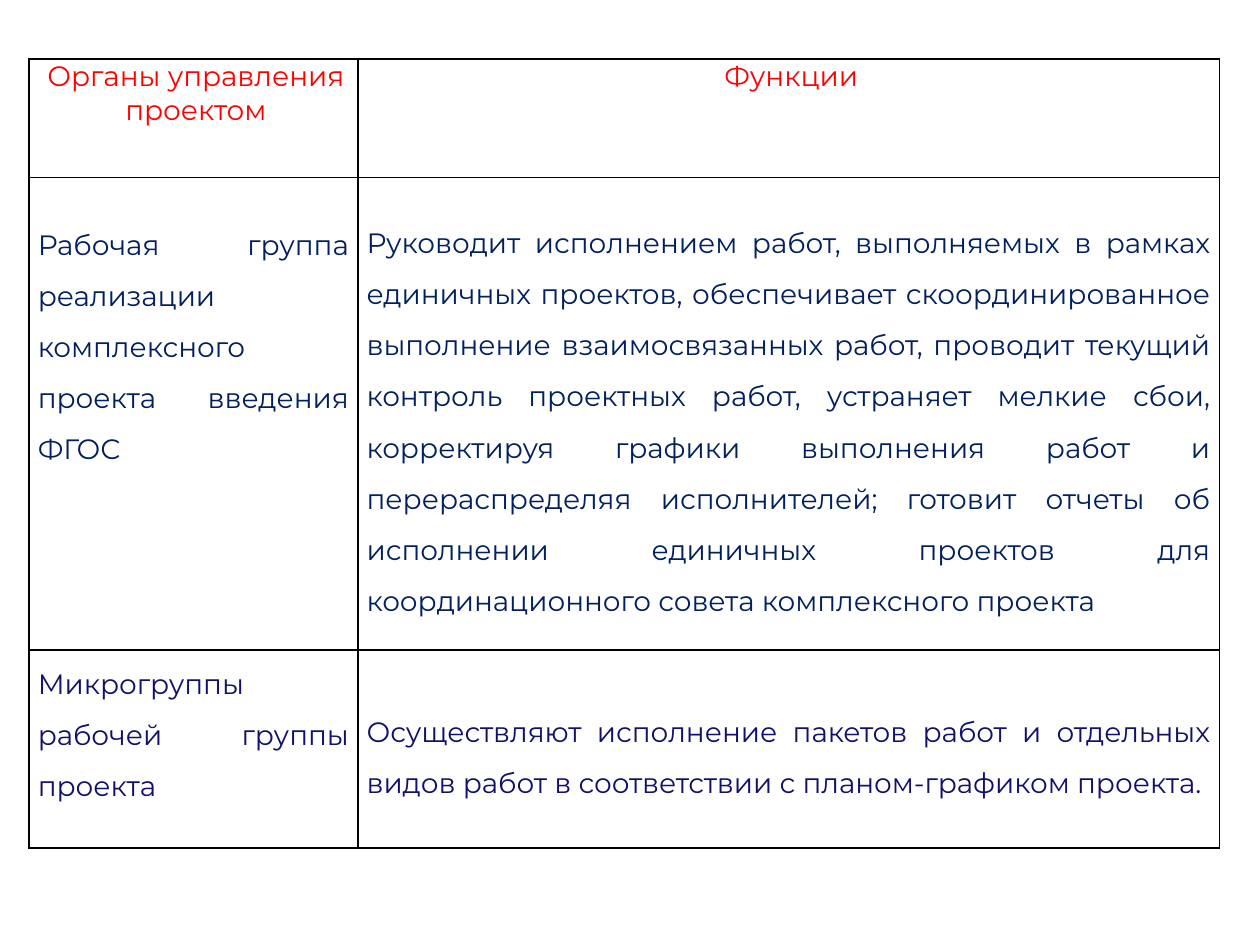
from lxml import etree
from pptx import Presentation
from pptx.dml.color import RGBColor
from pptx.enum.text import MSO_ANCHOR, PP_ALIGN
from pptx.oxml.ns import qn
from pptx.util import Inches, Pt

CENTER, JUSTIFY = PP_ALIGN.CENTER, PP_ALIGN.JUSTIFY
TOP, MIDDLE = MSO_ANCHOR.TOP, MSO_ANCHOR.MIDDLE

THEME = {
    "font": "Montserrat",
    "size": Pt(16),
    "header": "FF0000",
    "group": "002060",
    "microgroup": "11116D",
    "border": "000000",
    "border_width": Pt(1),
}

# Grid of the table, in inches
LEFT, UPPER = 0.23, 0.47
COLUMNS = (2.61, 6.84)
ROWS = (0.94, 3.75, 1.57)

# Each row: colour, alignment, line spacing, anchor of the second column,
# gap above the first column, texts
CONTENT = (
    ("header", CENTER, 1.0, TOP, 0, ("Органы управления проектом", "Функции")),
    ("group", JUSTIFY, 1.5, MIDDLE, 0.27, (
        "Рабочая группа реализации комплексного проекта введения ФГОС",
        "Руководит исполнением работ, выполняемых в рамках единичных проектов, "
        "обеспечивает скоординированное выполнение взаимосвязанных работ, "
        "проводит текущий контроль проектных работ, устраняет мелкие сбои, "
        "корректируя графики выполнения работ и перераспределяя исполнителей; "
        "готовит отчеты об исполнении единичных проектов для "
        "координационного совета комплексного проекта")),
    ("microgroup", JUSTIFY, 1.5, MIDDLE, 0, (
        "Микрогруппы рабочей группы проекта",
        "Осуществляют исполнение пакетов работ и отдельных видов работ "
        "в соответствии с планом-графиком проекта.")),
)


def draw_borders(cell):
    properties = cell._tc.get_or_add_tcPr()
    for side in ("a:lnL", "a:lnR", "a:lnT", "a:lnB"):
        line = etree.SubElement(properties, qn(side), w=str(THEME["border_width"]))
        fill = etree.SubElement(line, qn("a:solidFill"))
        etree.SubElement(fill, qn("a:srgbClr"), val=THEME["border"])


prs = Presentation()
prs.slide_width, prs.slide_height = Inches(10), Inches(7.5)
slide = prs.slides.add_slide(prs.slide_layouts[6])

# Table frame
functions_table = slide.shapes.add_table(
    len(ROWS), len(COLUMNS), Inches(LEFT), Inches(UPPER),
    Inches(sum(COLUMNS)), Inches(sum(ROWS))).table
functions_table.horz_banding = False
for column, width in zip(functions_table.columns, COLUMNS):
    column.width = Inches(width)
for row, height in zip(functions_table.rows, ROWS):
    row.height = Inches(height)

# Management bodies and their functions
for row, (color, align, spacing, anchor, gap, texts) in zip(functions_table.rows, CONTENT):
    for cell, text, cell_anchor, cell_gap in zip(row.cells, texts, (TOP, anchor), (gap, 0)):
        draw_borders(cell)
        cell.fill.background()
        cell.margin_left = cell.margin_right = Inches(0.07)
        cell.margin_top, cell.margin_bottom = Inches(cell_gap), 0
        cell.vertical_anchor = cell_anchor

        cell.text_frame.text = text
        paragraph = cell.text_frame.paragraphs[0]
        paragraph.alignment = align
        paragraph.line_spacing = spacing
        if align == CENTER:
            paragraph._p.get_or_add_pPr().set("marL", str(Inches(0.04)))
        font = paragraph.runs[0].font
        font.name, font.size, font.bold = THEME["font"], THEME["size"], False
        font.color.rgb = RGBColor.from_string(THEME[color])

prs.save("out.pptx")
